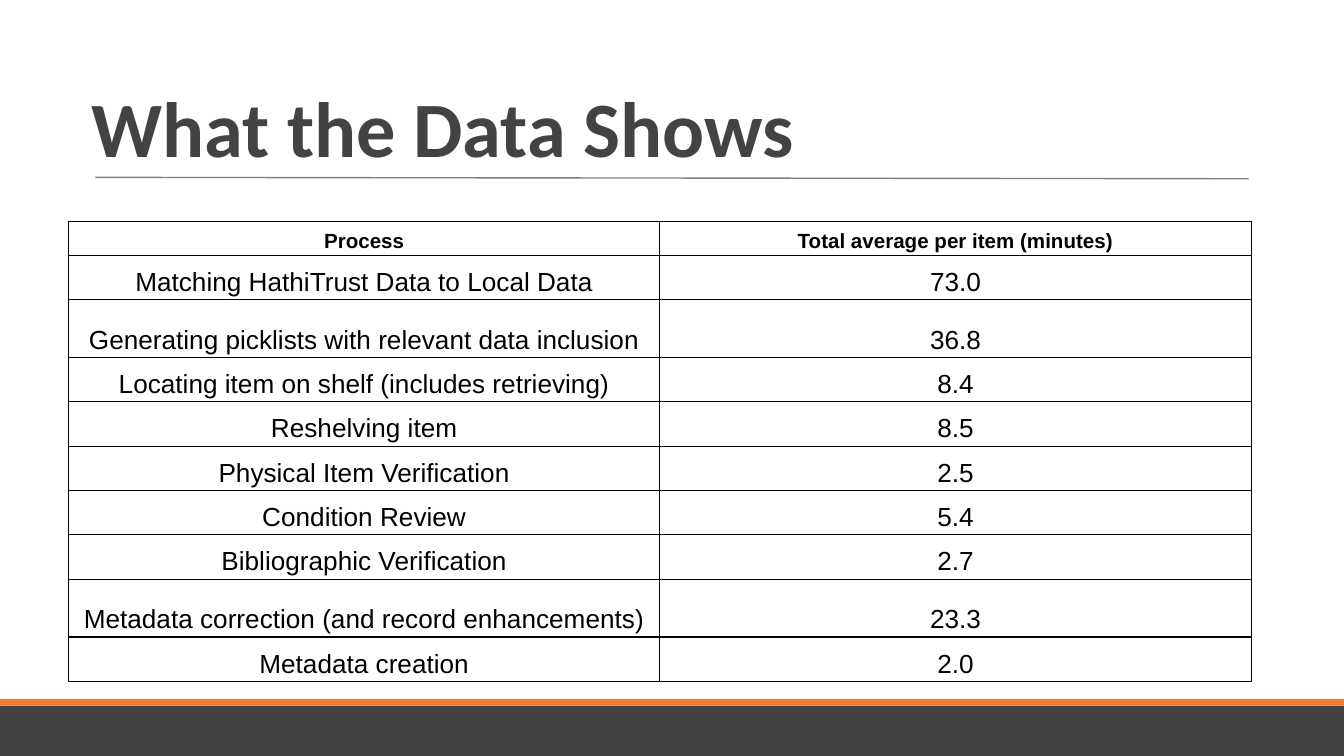
"""Builds the slide on average processing time per item."""
from dataclasses import dataclass

from lxml import etree
from pptx import Presentation
from pptx.dml.color import RGBColor
from pptx.enum import shapes, text
from pptx.oxml.ns import qn
from pptx.util import Inches, Pt

TITLE = "What the Data Shows"
HEADINGS = ("Process", "Total average per item (minutes)")
PROCESSES = [
    ("Matching HathiTrust Data to Local Data", "73.0"),
    ("Generating picklists with relevant data inclusion", "36.8"),
    ("Locating item on shelf (includes retrieving)", "8.4"),
    ("Reshelving item", "8.5"),
    ("Physical Item Verification", "2.5"),
    ("Condition Review", "5.4"),
    ("Bibliographic Verification", "2.7"),
    ("Metadata correction (and record enhancements)", "23.3"),
    ("Metadata creation", "2.0"),
]
TALL_ROWS = (2, 8)
HEADING_HEIGHT, ROW_HEIGHT, TALL_HEIGHT = 0.24, 0.33, 0.43
COLUMN_WIDTH = 4.4


@dataclass(frozen=True)
class Theme:
    dark: str = "434343"
    accent: str = "EF7C2F"
    rule: str = "7F7F7F"
    ink: str = "000000"
    title_font: str = "Calibri"
    table_font: str = "Arial"
    title_size: float = 42
    heading_size: float = 11
    body_size: float = 14
    line_width: float = 0.75


THEME = Theme()


def add_band(slide, top, bottom, width, color):
    band = slide.shapes.add_shape(
        shapes.MSO_SHAPE.RECTANGLE, 0, top, width, bottom - top)
    band.shadow.inherit = False
    band.fill.solid()
    band.fill.fore_color.rgb = RGBColor.from_string(color)
    band.line.fill.background()


def add_rule(slide):
    rule = slide.shapes.add_connector(
        shapes.MSO_CONNECTOR.STRAIGHT,
        Inches(0.71), Inches(1.32), Inches(9.29), Inches(1.33))
    rule.line.color.rgb = RGBColor.from_string(THEME.rule)
    rule.line.width = Pt(THEME.line_width)
    etree.SubElement(rule._element.spPr, qn("a:effectLst"))


def write(paragraph, words, font, size, color, bold):
    run = paragraph.add_run()
    run.text = words
    run.font.name, run.font.size, run.font.bold = font, Pt(size), bold
    run.font.color.rgb = RGBColor.from_string(color)


def add_title(slide):
    title = slide.shapes.add_textbox(
        Inches(0.58), Inches(0.24), Inches(8.57), Inches(1.1))
    frame = title.text_frame
    frame.word_wrap = True
    frame.vertical_anchor = text.MSO_ANCHOR.BOTTOM
    frame.paragraphs[0].line_spacing = 0.85
    write(frame.paragraphs[0], TITLE, THEME.title_font, THEME.title_size, THEME.dark, True)


def add_borders(cell):
    properties = cell._tc.get_or_add_tcPr()
    for position, side in enumerate(("a:lnL", "a:lnR", "a:lnT", "a:lnB")):
        border = etree.Element(qn(side), w=str(Pt(THEME.line_width)))
        fill = etree.SubElement(border, qn("a:solidFill"))
        etree.SubElement(fill, qn("a:srgbClr"), val=THEME.ink)
        properties.insert(position, border)


def fill_cell(cell, words, heading):
    cell.fill.background()
    cell.vertical_anchor = text.MSO_ANCHOR.BOTTOM
    cell.margin_left = cell.margin_right = Inches(0.03)
    cell.margin_top = cell.margin_bottom = Inches(0.02)
    paragraph = cell.text_frame.paragraphs[0]
    paragraph.alignment = text.PP_ALIGN.CENTER
    paragraph.line_spacing = 1.15
    size = THEME.heading_size if heading else THEME.body_size
    write(paragraph, words, THEME.table_font, size, THEME.ink, heading)
    add_borders(cell)


def add_process_table(slide):
    rows = [HEADINGS, *PROCESSES]
    heights = [HEADING_HEIGHT] + [
        TALL_HEIGHT if number in TALL_ROWS else ROW_HEIGHT
        for number in range(1, len(rows))]
    table = slide.shapes.add_table(
        len(rows), len(HEADINGS), Inches(0.51), Inches(1.65),
        Inches(COLUMN_WIDTH * len(HEADINGS)), Inches(sum(heights))).table
    table.horz_banding = False
    for column in table.columns:
        column.width = Inches(COLUMN_WIDTH)
    for r, (row, height) in enumerate(zip(rows, heights)):
        table.rows[r].height = Inches(height)
        for c, words in enumerate(row):
            fill_cell(table.cell(r, c), words, r == 0)


def main():
    deck = Presentation()
    deck.slide_width = Inches(10)
    deck.slide_height = deck.slide_width * 9 // 16
    slide = deck.slides.add_slide(deck.slide_layouts[6])
    add_band(slide, Inches(5.25), deck.slide_height, deck.slide_width, THEME.dark)
    add_band(slide, Inches(5.2), Inches(5.25), deck.slide_width, THEME.accent)
    add_rule(slide)
    add_title(slide)
    add_process_table(slide)
    deck.save("out.pptx")


if __name__ == "__main__":
    main()
